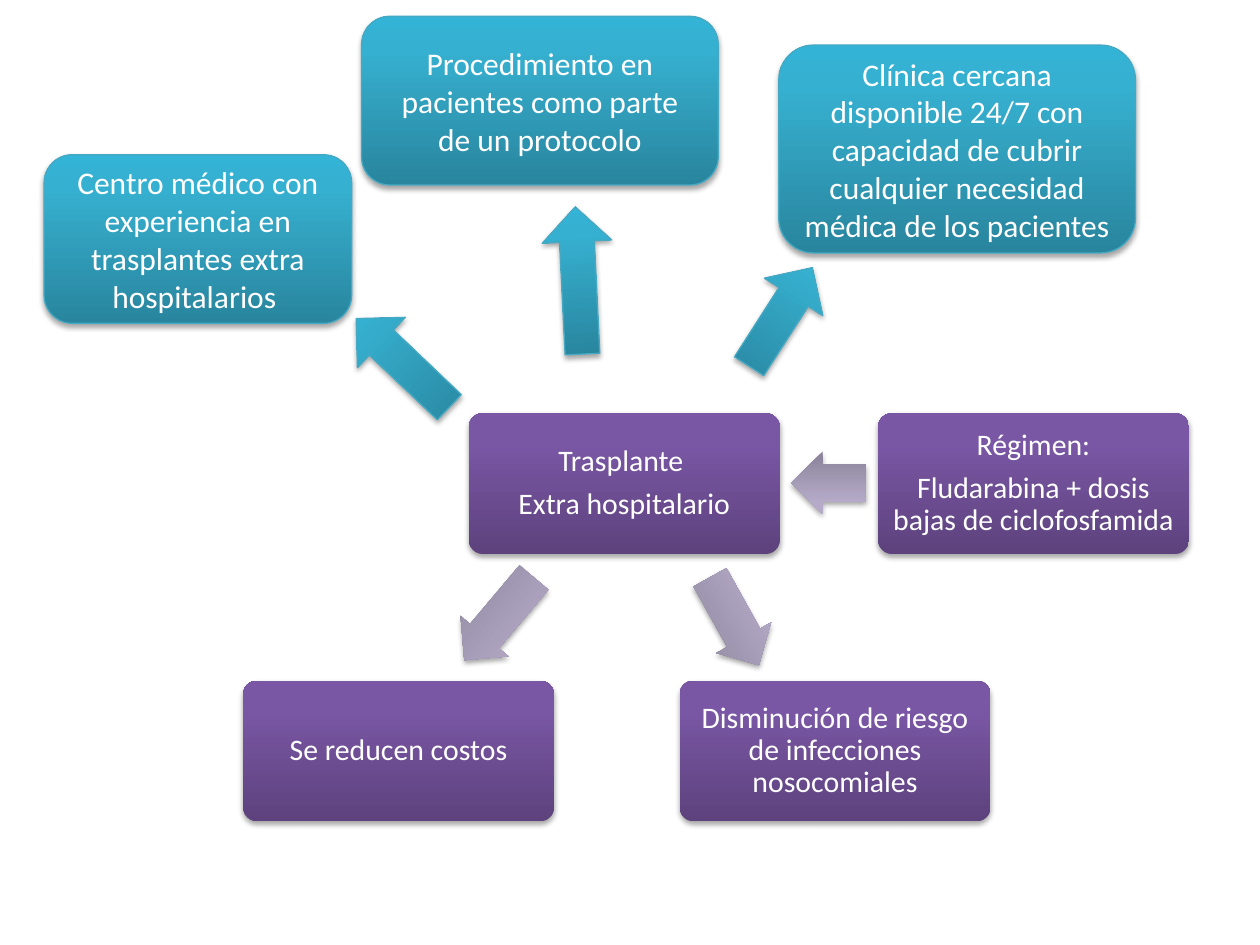
from dataclasses import dataclass

from pptx import Presentation
from pptx.dml.color import RGBColor
from pptx.enum.shapes import MSO_SHAPE
from pptx.enum.text import MSO_ANCHOR, PP_ALIGN
from pptx.oxml import parse_xml
from pptx.oxml.ns import nsdecls
from pptx.shapes.autoshape import Shape
from pptx.slide import Slide
from pptx.util import Cm, Pt

ROUNDED = MSO_SHAPE.ROUNDED_RECTANGLE
RIGHT_ARROW = MSO_SHAPE.RIGHT_ARROW
UP_ARROW = MSO_SHAPE.UP_ARROW
MIDDLE = MSO_ANCHOR.MIDDLE
CENTER = PP_ALIGN.CENTER

COLORS = {
    "purple_dark": "5D427D", "purple_mid": "7A57A5", "purple_light": "7A56A7",
    "mauve_dark": "8A8298", "mauve_mid": "B5ABC9", "mauve_light": "B6AACB",
    "teal_dark": "29859E", "teal_mid": "36B0D0", "teal_light": "33B3D5",
    "teal_line": "45A9C4", "text": "FFFFFF", "shadow": "000000",
}
GRADIENT_STOPS = {"dark": 0, "mid": 80, "light": 100}
FONT = "Calibri"


@dataclass(frozen=True)
class BoxStyle:
    hue: str
    corner: float
    font_size: float
    line_spacing: float
    margin_x: float
    margin_y: float
    line: str | None = None


@dataclass(frozen=True)
class ArrowStyle:
    hue: str
    kind: MSO_SHAPE
    shaft: float
    line: str | None = None


@dataclass(frozen=True)
class Box:
    """Text box with its place and size in centimetres."""
    style: BoxStyle
    left: float
    top: float
    width: float
    height: float
    text: str


@dataclass(frozen=True)
class Arrow:
    """Arrow with its unrotated place and size in centimetres."""
    style: ArrowStyle
    left: float
    top: float
    width: float
    height: float
    rotation: float


TOPIC = BoxStyle("purple", 0.1, 17, 0.9, 0.17, 0.17)
REQUIREMENT = BoxStyle("teal", 0.167, 18, 1, 0.25, 0.13, "teal_line")
TOPIC_ARROW = ArrowStyle("mauve", RIGHT_ARROW, 0.6)
REQUIREMENT_ARROW = ArrowStyle("teal", UP_ARROW, 0.5, "teal_line")

TOPIC_SIZE = (6.27, 2.84)
MIDDLE_ROW, BOTTOM_ROW = 8.33, 13.72
TOPIC_THICKNESS = 1.27
REQUIREMENT_THICKNESS = 1.4

BOXES = [
    Box(TOPIC, 17.7, MIDDLE_ROW, *TOPIC_SIZE,
        "Régimen:\nFludarabina + dosis bajas de ciclofosfamida"),
    Box(TOPIC, 9.45, MIDDLE_ROW, *TOPIC_SIZE, "Trasplante \nExtra hospitalario"),
    Box(TOPIC, 4.9, BOTTOM_ROW, *TOPIC_SIZE, "Se reducen costos"),
    Box(TOPIC, 13.7, BOTTOM_ROW, *TOPIC_SIZE,
        "Disminución de riesgo de infecciones nosocomiales"),
    Box(REQUIREMENT, 0.89, 3.12, 6.2, 3.4,
        "Centro médico con experiencia en trasplantes extra hospitalarios "),
    Box(REQUIREMENT, 7.29, 0.33, 7.19, 3.4,
        "Procedimiento en pacientes como parte de un protocolo"),
    Box(REQUIREMENT, 15.7, 0.91, 7.19, 4.19,
        "Clínica cercana disponible 24/7 con capacidad de cubrir "
        "cualquier necesidad médica de los pacientes"),
]

ARROWS = [
    Arrow(TOPIC_ARROW, 15.95, 9.1, 1.5, TOPIC_THICKNESS, 180),
    Arrow(TOPIC_ARROW, 8.97, 11.84, 2.18, TOPIC_THICKNESS, 130.1),
    Arrow(TOPIC_ARROW, 13.79, 11.89, 2.03, TOPIC_THICKNESS, 60.9),
    Arrow(REQUIREMENT_ARROW, 7.42, 6.02, REQUIREMENT_THICKNESS, 2.59, 313.6),
    Arrow(REQUIREMENT_ARROW, 10.97, 4.17, REQUIREMENT_THICKNESS, 2.97, 357.2),
    Arrow(REQUIREMENT_ARROW, 15.04, 5.21, REQUIREMENT_THICKNESS, 2.36, 32.7),
]


def set_gradient(shape: Shape, hue: str) -> None:
    """Fill from dark at the bottom to light at the top, turning with the shape."""
    stops = "".join(
        f'<a:gs pos="{position * 1000}">'
        f'<a:srgbClr val="{COLORS[f"{hue}_{shade}"]}"/></a:gs>'
        for shade, position in GRADIENT_STOPS.items()
    )
    gradient = parse_xml(
        f'<a:gradFill {nsdecls("a")} rotWithShape="1"><a:gsLst>{stops}</a:gsLst>'
        '<a:lin ang="16200000" scaled="0"/></a:gradFill>'
    )
    shape.fill.background()
    properties = shape._element.spPr
    properties.replace(properties.eg_fillProperties, gradient)


def set_shadow(shape: Shape) -> None:
    shape.shadow.inherit = False
    shape._element.spPr.effectLst.append(parse_xml(
        f'<a:outerShdw {nsdecls("a")} blurRad="{Pt(3.1)}" dist="{Pt(1.8)}" '
        f'dir="5400000" rotWithShape="0"><a:srgbClr val="{COLORS["shadow"]}">'
        '<a:alpha val="35000"/></a:srgbClr></a:outerShdw>'
    ))


def add_styled_shape(slide: Slide, kind: MSO_SHAPE, item: Box | Arrow) -> Shape:
    shape = slide.shapes.add_shape(
        kind, Cm(item.left), Cm(item.top), Cm(item.width), Cm(item.height)
    )
    set_gradient(shape, item.style.hue)
    if item.style.line:
        shape.line.color.rgb = RGBColor.from_string(COLORS[item.style.line])
        shape.line.width = Pt(0.75)
    else:
        shape.line.fill.background()
    set_shadow(shape)
    return shape


def add_box(slide: Slide, box: Box) -> None:
    style = box.style
    shape = add_styled_shape(slide, ROUNDED, box)
    shape.adjustments[0] = style.corner
    text_frame = shape.text_frame
    text_frame.word_wrap = True
    text_frame.vertical_anchor = MIDDLE
    text_frame.margin_left = text_frame.margin_right = Cm(style.margin_x)
    text_frame.margin_top = text_frame.margin_bottom = Cm(style.margin_y)
    text_frame.text = box.text
    for index, paragraph in enumerate(text_frame.paragraphs):
        paragraph.alignment = CENTER
        paragraph.line_spacing = style.line_spacing
        paragraph.space_before = Pt(6 if index else 0)
        for run in paragraph.runs:
            run.font.name = FONT
            run.font.size = Pt(style.font_size)
            run.font.color.rgb = RGBColor.from_string(COLORS["text"])


def add_arrow(slide: Slide, arrow: Arrow) -> None:
    shape = add_styled_shape(slide, arrow.style.kind, arrow)
    shape.adjustments[0] = arrow.style.shaft
    shape.adjustments[1] = 0.5
    shape.rotation = arrow.rotation


def main() -> None:
    presentation = Presentation()
    presentation.slide_width = Cm(25.4)
    presentation.slide_height = Cm(19.05)
    slide = presentation.slides.add_slide(presentation.slide_layouts[6])
    for box in BOXES:
        add_box(slide, box)
    for arrow in ARROWS:
        add_arrow(slide, arrow)
    presentation.save("out.pptx")


if __name__ == "__main__":
    main()
